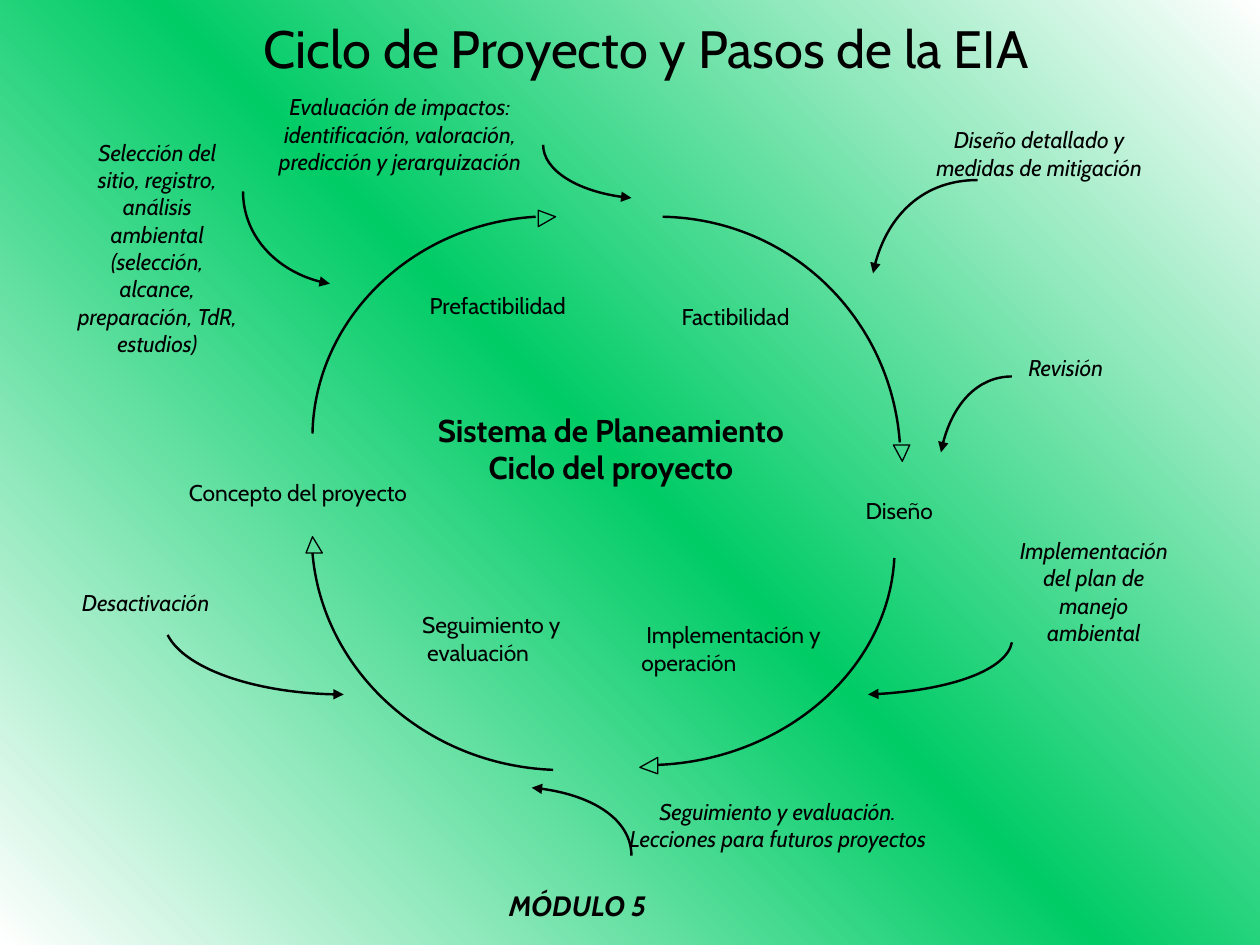
"""Build the slide on the project cycle and the steps of the EIA."""
from copy import deepcopy

from lxml import etree
from pptx import Presentation
from pptx.dml.color import RGBColor
from pptx.enum.text import MSO_AUTO_SIZE, PP_ALIGN
from pptx.oxml.ns import qn
from pptx.util import Cm, Pt

CENTER, LEFT = PP_ALIGN.CENTER, PP_ALIGN.LEFT
FIT_SHAPE = MSO_AUTO_SIZE.SHAPE_TO_FIT_TEXT
BLACK = RGBColor(0x00, 0x00, 0x00)
WHITE = RGBColor(0xFF, 0xFF, 0xFF)
GREEN = RGBColor(0x00, 0xCC, 0x66)
FONT = "Cabin"
ARC_WIDTH, HEAD_WIDTH = 1.38, 0.75
SPACE_INDENT = 0.1

TITLE = ("Ciclo de Proyecto y Pasos de la EIA", (3.18, 0.2, 19.69, 1.52))
MODULE = ("MÓDULO 5", (0, 17.78, 23.29, 0.94))
CENTRE = ("Sistema de Planeamiento\nCiclo del proyecto", (8.76, 8.28, 7.11, 1.52))

EIA_STEPS = [
    ("Selección del sitio, registro, análisis ambiental (selección, alcance, "
     "preparación, TdR, estudios)", (1.52, 2.79, 3.3, 4.42)),
    ("Evaluación de impactos:\nidentificación, valoración, predicción y jerarquización",
     (4.95, 1.88, 6.22, 1.65)),
    ("Diseño detallado y medidas de mitigación", (18.42, 2.54, 5.05, 1.09)),
    ("Implementación del plan de manejo ambiental", (20.4, 10.82, 3.3, 2.21)),
    ("Seguimiento y evaluación.\nLecciones para futuros proyectos",
     (12.5, 16.08, 6.35, 1.65)),
]
SHORT_STEPS = [
    ("Revisión", (20.73, 7.14, 1.73, 0.56)),
    ("Desactivación", (1.65, 11.86, 2.82, 0.56)),
]
PHASES = [
    ("Prefactibilidad", (8.66, 5.89, 2.9, 0.56), None),
    ("Factibilidad", (13.74, 6.1, 2.36, 0.56), None),
    ("Diseño", (17.45, 10.01, 1.45, 0.56), None),
    ("Implementación y\noperación", (12.93, 12.52, 3.91, 1.09), 0),
    ("Concepto del proyecto", (3.81, 9.65, 4.6, 0.56), None),
    ("Seguimiento y\nevaluación", (8.51, 12.32, 2.84, 1.09), 1),
]

CYCLE_ARCS = [
    [(6.3, 8.74), (6.35, 6.43), (8.31, 4.52), (10.8, 4.37)],
    [(11.15, 15.52), (8.56, 15.42), (6.5, 13.51), (6.3, 11.15)],
    [(18.03, 11.25), (17.91, 13.51), (15.8, 15.32), (13.26, 15.42)],
    [(13.36, 4.37), (15.95, 4.42), (17.96, 6.43), (18.14, 8.92)],
]
CYCLE_HEADS = [
    [(10.85, 4.57), (11.2, 4.37), (10.85, 4.24)],
    [(6.5, 11.15), (6.3, 10.82), (6.17, 11.15)],
    [(13.26, 15.27), (12.9, 15.47), (13.26, 15.6)],
    [(18.01, 8.97), (18.19, 9.3), (18.34, 8.97)],
]
STEP_ARROWS = [
    [(4.9, 3.86), (4.9, 4.75), (5.66, 5.56), (6.65, 5.72)],
    [(19.71, 3.63), (18.62, 3.63), (17.81, 4.42), (17.6, 5.51)],
    [(10.95, 2.92), (10.95, 3.43), (11.73, 3.91), (12.73, 3.99)],
    [(12.73, 17.25), (12.73, 16.54), (11.89, 15.98), (10.72, 15.88)],
    [(20.4, 12.95), (20.29, 13.51), (19.08, 13.94), (17.5, 14)],
    [(20.4, 7.59), (19.71, 7.59), (19.13, 8.23), (18.97, 9.12)],
    [(3.38, 12.8), (3.71, 13.46), (5.18, 14), (6.93, 14)],
]


def paint_background(slide):
    fill = slide.background.fill
    fill.gradient()
    fill.gradient_angle = 45
    stop_list = next(slide.element.iter(qn("a:gsLst")))
    stop_list.insert(1, deepcopy(stop_list[0]))
    for stop, position, color in zip(fill.gradient_stops, (0, 0.5, 1), (WHITE, GREEN, WHITE)):
        stop.position = position
        stop.color.rgb = color


def add_text(slide, text, box, size=13, bold=False, italic=False,
             align=CENTER, wrap=True, inset=0, indented=None):
    shape = slide.shapes.add_textbox(*map(Cm, box))
    frame = shape.text_frame
    frame.text = text
    frame.word_wrap = wrap
    frame.auto_size = FIT_SHAPE
    frame.margin_left = frame.margin_right = Cm(inset)
    frame.margin_top = frame.margin_bottom = Cm(inset / 2)
    for index, paragraph in enumerate(frame.paragraphs):
        paragraph.alignment = align
        if index == indented:
            paragraph._p.get_or_add_pPr().set("marL", str(Cm(SPACE_INDENT)))
        for run in paragraph.runs:
            run.font.name = FONT
            run.font.size = Pt(size)
            run.font.bold = bold
            run.font.italic = italic
            run.font.color.rgb = BLACK


def add_outline(slide, points, width, close=False):
    start, *others = [(Cm(x), Cm(y)) for x, y in points]
    builder = slide.shapes.build_freeform(*start)
    builder.add_line_segments(others, close=close)
    shape = builder.convert_to_shape()
    shape.fill.background()
    shape.line.color.rgb = BLACK
    shape.line.width = Pt(width)
    shape.shadow.inherit = False
    return shape


def add_curve(slide, points, arrow=False):
    shape = add_outline(slide, points, ARC_WIDTH)
    outline = next(shape.element.iter(qn("a:path")))
    segments = outline.findall(qn("a:lnTo"))
    curve = etree.SubElement(outline, qn("a:cubicBezTo"))
    for segment in segments:
        curve.append(segment[0])
        outline.remove(segment)
    if arrow:
        line = shape.element.spPr.find(qn("a:ln"))
        etree.SubElement(line, qn("a:tailEnd"), type="triangle")


def main():
    presentation = Presentation()
    presentation.slide_width, presentation.slide_height = Cm(25.4), Cm(19.05)
    slide = presentation.slides.add_slide(presentation.slide_layouts[6])
    paint_background(slide)

    add_text(slide, *MODULE, size=16, bold=True, italic=True, inset=0.25)
    add_text(slide, *CENTRE, size=18, bold=True, wrap=False)
    for arc, head in zip(CYCLE_ARCS, CYCLE_HEADS):
        add_curve(slide, arc)
        add_outline(slide, head, HEAD_WIDTH, close=True)
    for text, box in EIA_STEPS:
        add_text(slide, text, box, italic=True)
    for text, box in SHORT_STEPS:
        add_text(slide, text, box, italic=True, align=LEFT, wrap=False)
    for text, box, indented in PHASES:
        add_text(slide, text, box, align=LEFT, wrap=False, indented=indented)
    for points in STEP_ARROWS:
        add_curve(slide, points, arrow=True)
    add_text(slide, *TITLE, size=30, inset=0.25)

    presentation.save("out.pptx")


if __name__ == "__main__":
    main()
